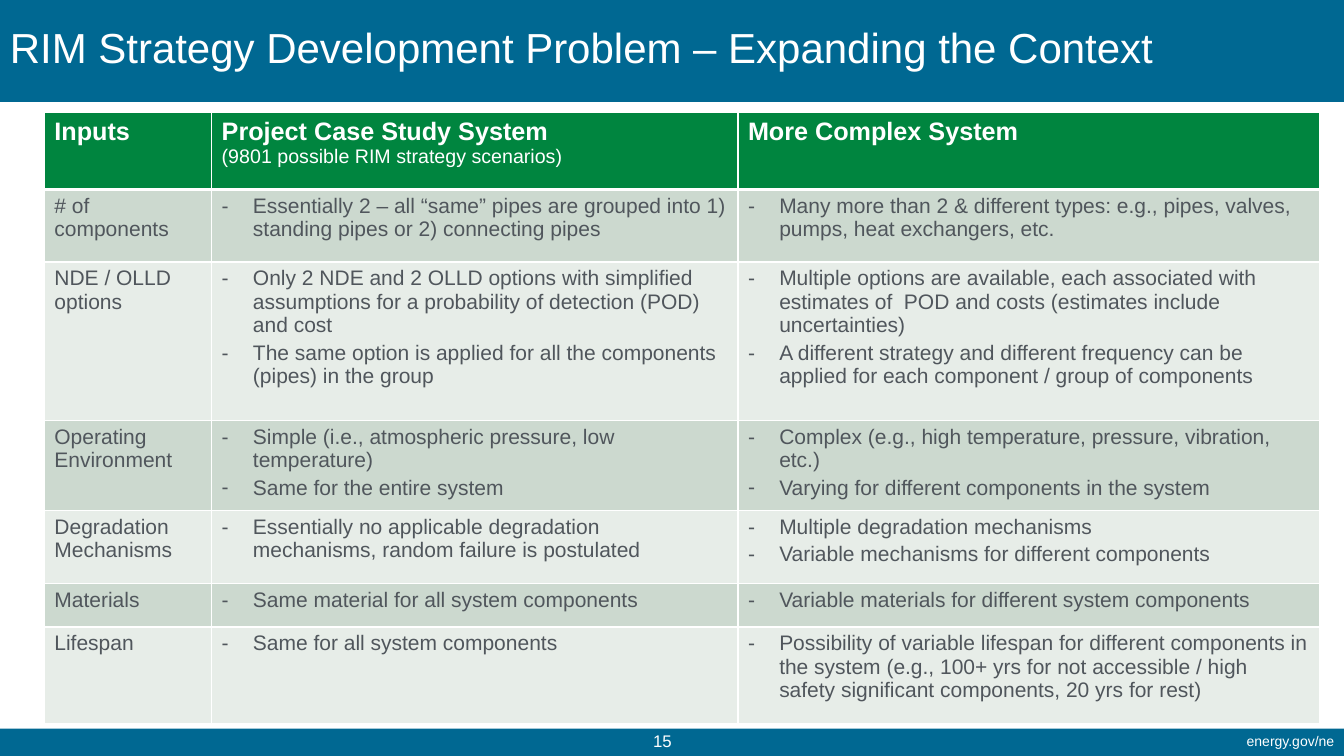
from dataclasses import dataclass
from typing import Any

from lxml.etree import SubElement
from pptx import Presentation
from pptx.dml.color import RGBColor
from pptx.enum.shapes import MSO_SHAPE as Preset
from pptx.enum.text import MSO_ANCHOR as Anchor, PP_ALIGN as Align
from pptx.oxml import parse_xml
from pptx.oxml.ns import nsdecls, qn
from pptx.util import Inches, Pt

WHITE = RGBColor(0xFF, 0xFF, 0xFF)
BLUE = RGBColor(0x00, 0x68, 0x92)
GREEN = RGBColor(0x00, 0x85, 0x3F)
GRAY = RGBColor(0x50, 0x56, 0x5C)
ROW_FILLS = (RGBColor(0xCC, 0xD9, 0xCF), RGBColor(0xE7, 0xED, 0xE8))
FONT = "Arial"
SLIDE_WIDTH, SLIDE_HEIGHT = Inches(13.33), Inches(7.5)
BULLET_INDENT = Inches(0.31)


def across(percent: float) -> int:
    return round(SLIDE_WIDTH * percent / 100)


def down(percent: float) -> int:
    return round(SLIDE_HEIGHT * percent / 100)


@dataclass(frozen=True)
class Box:
    """A frame in percent of the slide's width and height."""
    left: float
    top: float
    width: float
    height: float

    def frame(self) -> tuple[int, int, int, int]:
        return across(self.left), down(self.top), across(self.width), down(self.height)


@dataclass(frozen=True)
class Label:
    box: Box
    text: str
    size: float
    anchor: Anchor
    paragraph_format: dict[str, Any]


@dataclass(frozen=True)
class InputRow:
    height: float
    name: str
    case_study: tuple[str, ...]
    complex_system: tuple[str, ...]


BANDS = (Box(0, 0, 100, 13.47), Box(0, 96.4, 100, 3.6))
LABELS = (
    Label(Box(59.94, 96.53, 40.06, 3.47), "energy.gov/ne", 10, Anchor.TOP,
          {"alignment": Align.RIGHT, "line_spacing": 0.9}),
    Label(Box(47.26, 96, 4.05, 4), "15", 12, Anchor.TOP, {"alignment": Align.CENTER}),
    Label(Box(0, 1.73, 100, 10.4), "RIM Strategy Development Problem – Expanding the Context",
          30, Anchor.MIDDLE, {"alignment": Align.LEFT, "line_spacing": Pt(28)}),
)
TABLE_BOX = Box(3.3, 14.93, 94.9, 80.8)
COLUMN_WIDTHS = (12.45, 39.16, 43.29)
HEADER_HEIGHT = 10.13
HEADERS = (
    ("Inputs",),
    ("Project Case Study System", "(9801 possible RIM strategy scenarios)"),
    ("More Complex System",),
)
INPUT_ROWS = (
    InputRow(9.6, "# of components",
             ("Essentially 2 – all “same” pipes are grouped into 1) standing pipes "
              "or 2) connecting pipes",),
             ("Many more than 2 & different types: e.g., pipes, valves, pumps, "
              "heat exchangers, etc.",)),
    InputRow(20.93, "NDE / OLLD options",
             ("Only 2 NDE and 2 OLLD options with simplified assumptions for a "
              "probability of detection (POD) and cost",
              "The same option is applied for all the components (pipes) in the group"),
             ("Multiple options are available, each associated with estimates of  POD "
              "and costs (estimates include uncertainties)",
              "A different strategy and different frequency can be applied for each "
              "component / group of components")),
    InputRow(9.73, "Operating Environment",
             ("Simple (i.e., atmospheric pressure, low temperature)",
              "Same for the entire system"),
             ("Complex (e.g., high temperature, pressure, vibration, etc.)",
              "Varying for different components in the system")),
    InputRow(9.73, "Degradation Mechanisms",
             ("Essentially no applicable degradation mechanisms, random failure "
              "is postulated",),
             ("Multiple degradation mechanisms",
              "Variable mechanisms for different components")),
    InputRow(5.73, "Materials",
             ("Same material for all system components",),
             ("Variable materials for different system components",)),
    InputRow(12.8, "Lifespan",
             ("Same for all system components",),
             ("Possibility of variable lifespan for different components in the system "
              "(e.g., 100+ yrs for not accessible / high safety significant components, "
              "20 yrs for rest)",)),
)


def apply_format(target: Any, values: dict[str, Any]) -> None:
    for name, value in values.items():
        setattr(target, name, value)


def write(paragraph: Any, text: str, size: float, color: RGBColor, bold: bool = False) -> None:
    run = paragraph.add_run()
    run.text = text
    apply_format(run.font, {"name": FONT, "size": Pt(size), "bold": bold})
    run.font.color.rgb = color


def add_bullet(paragraph: Any) -> None:
    paragraph.space_after = Pt(3)
    properties = paragraph._p.get_or_add_pPr()
    properties.set("marL", str(BULLET_INDENT))
    properties.set("indent", str(-BULLET_INDENT))
    SubElement(properties, qn("a:buFont")).set("typeface", FONT)
    SubElement(properties, qn("a:buChar")).set("char", "-")


def add_band(slide: Any, box: Box) -> None:
    shape = slide.shapes.add_shape(Preset.RECTANGLE, *box.frame())
    shape.shadow.inherit = False
    shape.fill.solid()
    shape.fill.fore_color.rgb = BLUE
    shape.line.fill.background()


def add_label(slide: Any, label: Label) -> None:
    text_frame = slide.shapes.add_textbox(*label.box.frame()).text_frame
    apply_format(text_frame, {"word_wrap": True, "vertical_anchor": label.anchor})
    paragraph = text_frame.paragraphs[0]
    apply_format(paragraph, label.paragraph_format)
    write(paragraph, label.text, label.size, WHITE)


def style_cell(cell: Any, fill: RGBColor, borders: dict[str, float]) -> None:
    cell.fill.solid()
    cell.fill.fore_color.rgb = fill
    properties = cell._tc.get_or_add_tcPr()
    for position, (side, width) in enumerate(borders.items()):
        properties.insert(position, parse_xml(
            f'<a:ln{side} {nsdecls("a")} w="{Pt(width)}"><a:solidFill>'
            f'<a:srgbClr val="{WHITE}"/></a:solidFill></a:ln{side}>'))


def fill_cell(cell: Any, lines: tuple[str, ...], is_header: bool, bulleted: bool) -> None:
    text_frame = cell.text_frame
    for index, line in enumerate(lines):
        paragraph = text_frame.add_paragraph() if index else text_frame.paragraphs[0]
        if bulleted:
            add_bullet(paragraph)
        if is_header:
            write(paragraph, line, 14 if index else 18, WHITE, bold=index == 0)
        else:
            write(paragraph, line, 15, GRAY)


def add_comparison(slide: Any) -> None:
    contents = [HEADERS] + [((row.name,), row.case_study, row.complex_system)
                            for row in INPUT_ROWS]
    heights = [HEADER_HEIGHT] + [row.height for row in INPUT_ROWS]
    table = slide.shapes.add_table(len(contents), len(HEADERS), *TABLE_BOX.frame()).table
    table.horz_banding = False
    for column, width in zip(table.columns, COLUMN_WIDTHS):
        column.width = across(width)
    for row_index, (cells, height) in enumerate(zip(contents, heights)):
        table.rows[row_index].height = down(height)
        is_header = row_index == 0
        fill = GREEN if is_header else ROW_FILLS[(row_index - 1) % 2]
        borders = {"L": 1, "R": 1, "T": 3 if row_index == 1 else 1, "B": 3 if is_header else 1}
        for column_index, lines in enumerate(cells):
            cell = table.cell(row_index, column_index)
            style_cell(cell, fill, borders)
            fill_cell(cell, lines, is_header, not is_header and column_index > 0)


def main() -> None:
    presentation = Presentation()
    apply_format(presentation, {"slide_width": SLIDE_WIDTH, "slide_height": SLIDE_HEIGHT})
    slide = presentation.slides.add_slide(presentation.slide_layouts[6])
    # Title and footer bands
    for band in BANDS:
        add_band(slide, band)
    # Title, page number and web address
    for label in LABELS:
        add_label(slide, label)
    # Comparison of the two systems
    add_comparison(slide)
    presentation.save("out.pptx")


if __name__ == "__main__":
    main()
